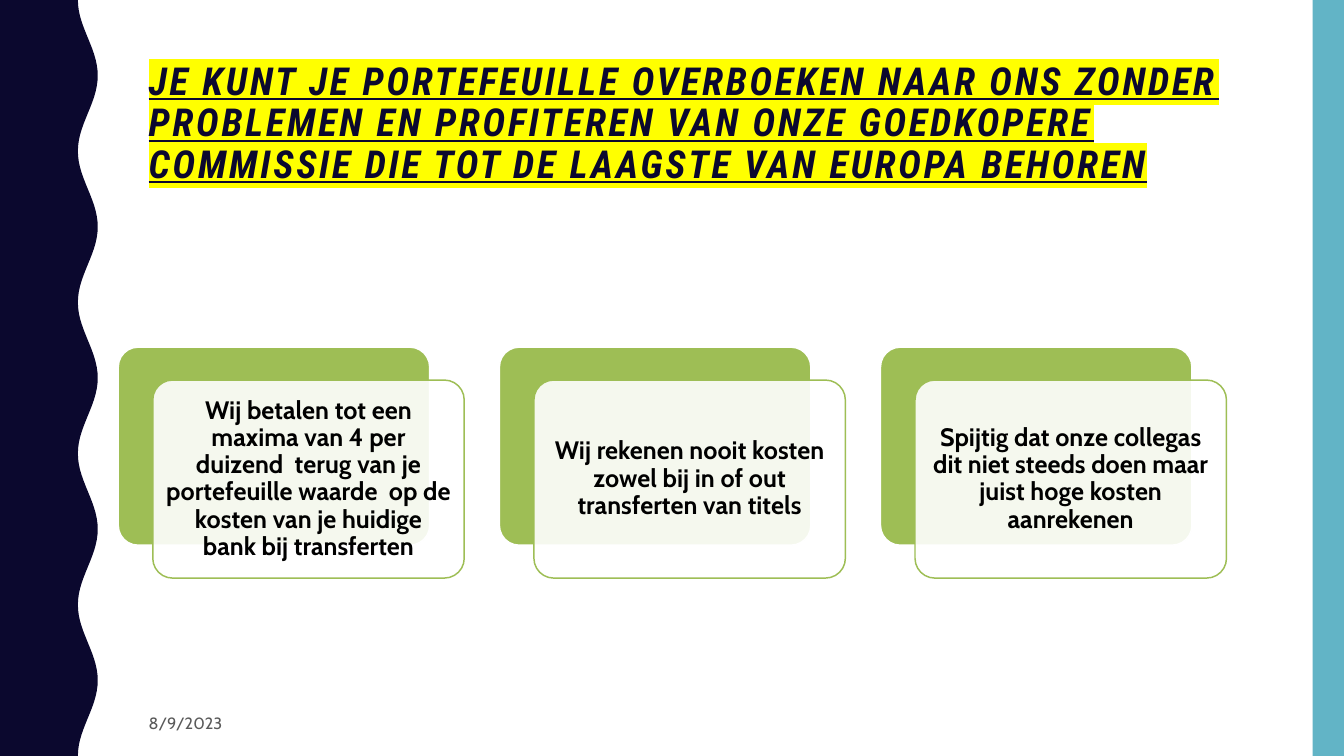
"""Build the slide about transferring a portfolio without costs."""
from dataclasses import dataclass
from math import cos, pi

from lxml import etree
from pptx import Presentation
from pptx.dml.color import RGBColor
from pptx.enum.shapes import MSO_SHAPE
from pptx.enum.text import MSO_ANCHOR, PP_ALIGN
from pptx.oxml.ns import qn
from pptx.util import Pt

RECTANGLE = MSO_SHAPE.RECTANGLE
ROUNDED = MSO_SHAPE.ROUNDED_RECTANGLE
MIDDLE = MSO_ANCHOR.MIDDLE
CENTER = PP_ALIGN.CENTER

COLORS = {
    "navy": "0B082E",
    "teal": "62B4C6",
    "green": "9EBE55",
    "white": "FFFFFF",
    "black": "000000",
    "gray": "595959",
    "yellow": "FFFF00",
}
PAGE_WIDTH, PAGE_HEIGHT = 907, 510
WAVE_MIDDLE, WAVE_DEPTH = 59.3, 6.7
WAVE_COUNT, WAVE_STEPS = 5, 28
BAND_WIDTH = 21.2
TEXT_LEFT = 93.2
CARD_LEFT, CARD_TOP, CARD_PITCH = 79.8, 234.2, 257.2
CARD_WIDTH, CARD_HEIGHT = 210.2, 133.6
FRONT_SHIFT_X, FRONT_SHIFT_Y = 23.3, 22.2


@dataclass
class Frame:
    left: float
    top: float
    width: float
    height: float


@dataclass
class Style:
    font: str
    size: float
    color: str
    emphasis: bool = False
    bold: bool = False


TITLE = ("JE KUNT JE PORTEFEUILLE OVERBOEKEN NAAR ONS ZONDER PROBLEMEN EN PROFITEREN "
         "VAN ONZE GOEDKOPERE COMMISSIE DIE TOT DE LAAGSTE VAN EUROPA BEHOREN")
CARD_TEXTS = [
    "Wij betalen tot een maxima van 4 per duizend  terug van je portefeuille waarde  "
    "op de kosten van je huidige bank bij transferten",
    "Wij rekenen nooit kosten zowel bij in of out transferten van titels",
    "Spijtig dat onze collegas dit niet steeds doen maar juist hoge kosten aanrekenen",
]
TITLE_STYLE = Style("Roboto Condensed", 26, "navy", emphasis=True, bold=True)
DATE_STYLE = Style("Cabin", 11, "gray")
CARD_STYLE = Style("Cabin", 17, "black", bold=True)


def rgb(name: str) -> RGBColor:
    return RGBColor.from_string(COLORS[name])


def paint(shape, fill: str, line: str | None = None) -> None:
    shape.shadow.inherit = False
    shape.fill.solid()
    shape.fill.fore_color.rgb = rgb(fill)
    if line:
        shape.line.color.rgb = rgb(line)
        shape.line.width = Pt(1)
    else:
        shape.line.fill.background()


def add_block(page, kind, frame: Frame, fill: str, line: str | None = None):
    block = page.shapes.add_shape(kind, Pt(frame.left), Pt(frame.top),
                                  Pt(frame.width), Pt(frame.height))
    paint(block, fill, line)
    return block


def write(shape, text: str, style: Style):
    text_frame = shape.text_frame
    text_frame.word_wrap = True
    text_frame.vertical_anchor = MIDDLE
    para = text_frame.paragraphs[0]
    para.add_run().text = text
    font = para.font
    font.name = style.font
    font.size = Pt(style.size)
    font.bold = style.bold
    font.italic = style.emphasis
    font.underline = style.emphasis
    font.color.rgb = rgb(style.color)
    return para


def add_text(page, frame: Frame, text: str, style: Style):
    box = page.shapes.add_textbox(Pt(frame.left), Pt(frame.top),
                                  Pt(frame.width), Pt(frame.height))
    return write(box, text, style)


def highlight(para, color: str, spacing: int) -> None:
    for span in para.runs:
        properties = span.font._element
        properties.set("spc", str(spacing))
        marker = etree.SubElement(properties, qn("a:highlight"))
        etree.SubElement(marker, qn("a:srgbClr")).set("val", COLORS[color])


def add_wave(page) -> None:
    total = WAVE_COUNT * WAVE_STEPS
    edge = [(Pt(WAVE_MIDDLE - WAVE_DEPTH * cos(2 * pi * step / WAVE_STEPS)),
             Pt(PAGE_HEIGHT * step / total)) for step in range(total + 1)]
    builder = page.shapes.build_freeform(0, 0)
    builder.add_line_segments(edge + [(0, Pt(PAGE_HEIGHT))], close=True)
    paint(builder.convert_to_shape(), "navy")


def add_card(page, index: int, text: str) -> None:
    left = CARD_LEFT + index * CARD_PITCH
    back = add_block(page, ROUNDED, Frame(left, CARD_TOP, CARD_WIDTH, CARD_HEIGHT),
                     "green", "white")
    front = add_block(page, ROUNDED, Frame(left + FRONT_SHIFT_X, CARD_TOP + FRONT_SHIFT_Y,
                                           CARD_WIDTH, CARD_HEIGHT), "white", "green")
    for block in (back, front):
        block.adjustments[0] = 0.1
    fill_color = front._element.spPr.find(qn("a:solidFill"))[0]
    etree.SubElement(fill_color, qn("a:alpha")).set("val", "90000")
    text_frame = front.text_frame
    text_frame.margin_left = text_frame.margin_right = Pt(5)
    text_frame.margin_top = text_frame.margin_bottom = Pt(5)
    para = write(front, text, CARD_STYLE)
    para.alignment = CENTER
    para.line_spacing = 0.9


def main() -> None:
    deck = Presentation()
    deck.slide_width, deck.slide_height = Pt(PAGE_WIDTH), Pt(PAGE_HEIGHT)
    page = deck.slides.add_slide(deck.slide_layouts[6])
    add_wave(page)
    add_block(page, RECTANGLE,
              Frame(PAGE_WIDTH - BAND_WIDTH, 0, BAND_WIDTH, PAGE_HEIGHT), "teal")
    title = add_text(page, Frame(TEXT_LEFT, 28.4, 757.4, 110.9), TITLE, TITLE_STYLE)
    title.line_spacing = 0.9
    highlight(title, "yellow", 190)
    add_text(page, Frame(TEXT_LEFT, 474.5, 173.5, 25.9), "8/9/2023", DATE_STYLE)
    for index, text in enumerate(CARD_TEXTS):
        add_card(page, index, text)
    deck.save("out.pptx")


if __name__ == "__main__":
    main()
